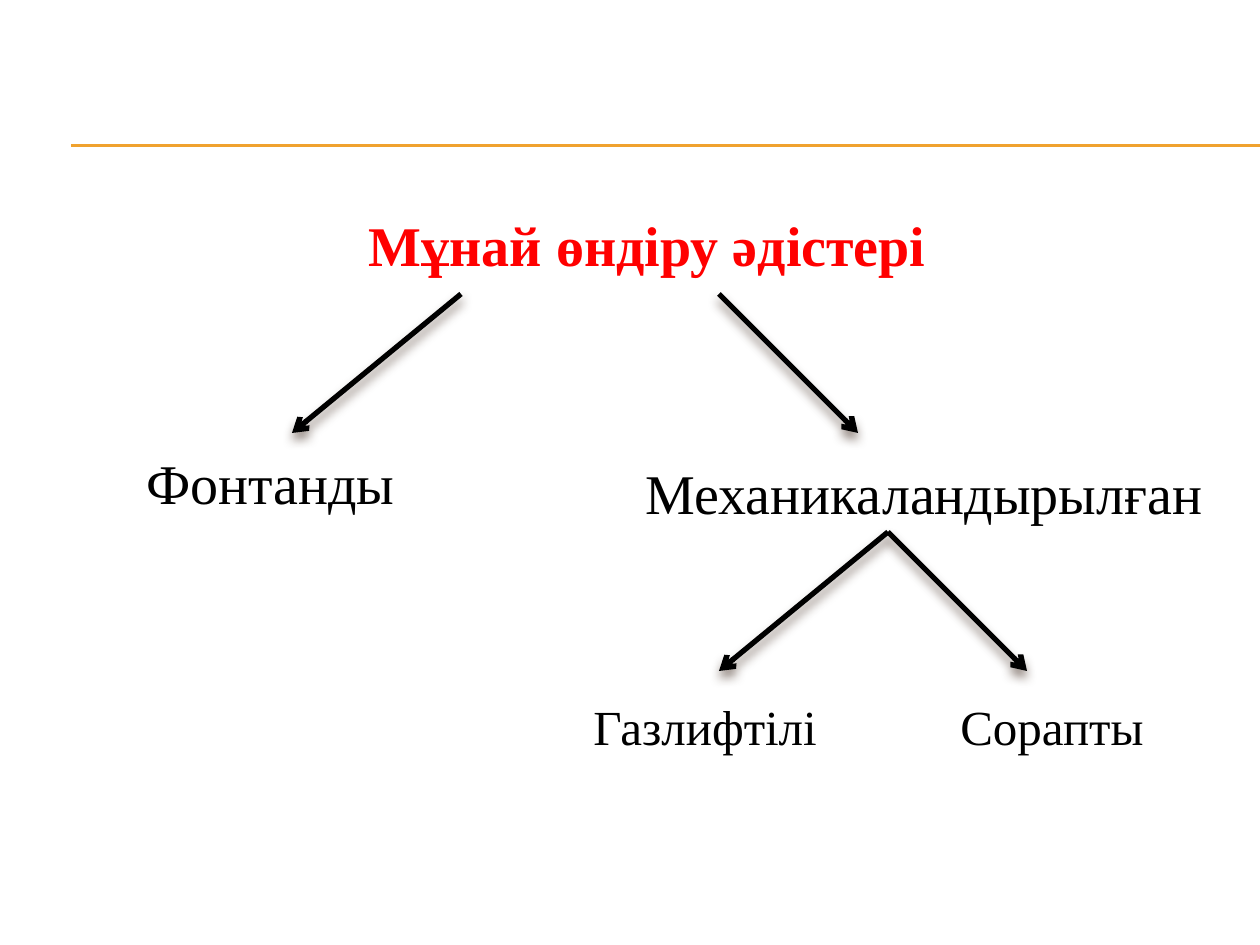
from lxml import etree
from pptx import Presentation
from pptx.dml.color import RGBColor
from pptx.enum.shapes import MSO_CONNECTOR
from pptx.enum.text import MSO_AUTO_SIZE, PP_ALIGN
from pptx.oxml.ns import qn
from pptx.util import Emu, Pt

STRAIGHT = MSO_CONNECTOR.STRAIGHT
LEFT, CENTER = PP_ALIGN.LEFT, PP_ALIGN.CENTER
FONT = "Times New Roman"
BLACK, RED, GOLD, BROWN = "000000", "FF0000", "F0A22E", "4E3B30"

# text, box (left, top, width, height), size, colour, bold, alignment, wrap
LABELS = [
    ("Мұнай өндіру әдістері", (35, 204, 1225, 81), 32, RED, True, CENTER, True),
    ("Фонтанды", (134, 442, 276, 81), 32, BLACK, False, LEFT, False),
    ("Механикаландырылған", (630, 452, 588, 81), 32, BLACK, False, CENTER, False),
    ("Газлифтілі", (581, 690, 251, 72), 28, BLACK, False, LEFT, False),
    ("Сорапты", (948, 690, 209, 72), 28, BLACK, False, LEFT, False),
]
RULES = [(71, y, 1260, y) for y in (145, 146)]
DROP, LEFT_RUN, RIGHT_RUN = 139, -169, 139
# start x, start y, horizontal run
BRANCHES = [
    (461, 294, LEFT_RUN),
    (719, 294, RIGHT_RUN),
    (888, 532, RIGHT_RUN),
    (888, 532, LEFT_RUN),
]


def px(n):
    return Emu(round(n * 914400 / 126))


def rgb(value):
    return RGBColor.from_string(value)


def add_label(text, box, size, color, bold, align, wrap):
    tf = slide.shapes.add_textbox(*map(px, box)).text_frame
    tf.word_wrap = wrap
    tf.auto_size = MSO_AUTO_SIZE.SHAPE_TO_FIT_TEXT
    p = tf.paragraphs[0]
    p.alignment = align
    r = p.add_run()
    r.text = text
    for name, value in {"name": FONT, "size": Pt(size), "bold": bold}.items():
        setattr(r.font, name, value)
    r.font.color.rgb = rgb(color)


def add_line(ends, color, width):
    """Draw a straight line; return it with its empty effect list."""
    s = slide.shapes.add_connector(STRAIGHT, *map(px, ends))
    s.line.color.rgb = rgb(color)
    s.line.width = Pt(width)
    return s, etree.SubElement(s._element.spPr, qn("a:effectLst"))


def add_arrow(x, y, run):
    s, effects = add_line((x, y, x + run, y + DROP), BLACK, 3)
    etree.SubElement(s.line._get_or_add_ln(), qn("a:tailEnd"), type="arrow")
    shadow = etree.SubElement(
        effects, qn("a:outerShdw"), blurRad=str(Pt(6)), dist=str(Pt(4)),
        dir="5400000", algn="ctr", rotWithShape="0")
    tint = etree.SubElement(shadow, qn("a:srgbClr"), val=BROWN)
    etree.SubElement(tint, qn("a:alpha"), val="60000")


prs = Presentation()
prs.slide_width, prs.slide_height = px(1260), px(945)
slide = prs.slides.add_slide(prs.slide_layouts[6])

for rule in RULES:
    add_line(rule, GOLD, 0.75)
for label in LABELS:
    add_label(*label)
for branch in BRANCHES:
    add_arrow(*branch)

prs.save("out.pptx")
